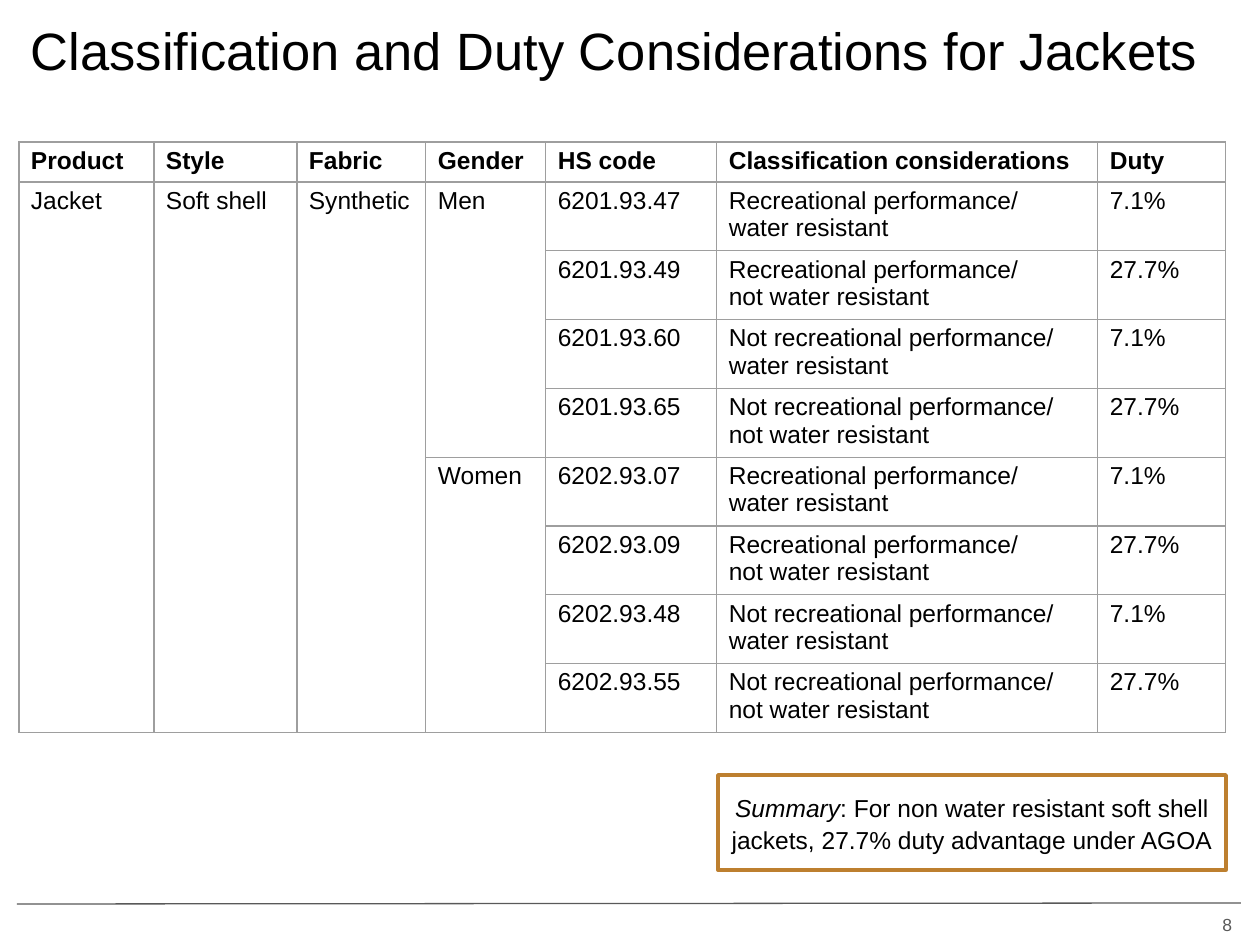
from itertools import product

from lxml import etree
from pptx import Presentation
from pptx import util as u
from pptx.dml.color import RGBColor
from pptx.enum import shapes, text
from pptx.oxml.ns import qn

# Content
TITLE = "Classification and Duty Considerations for Jackets"
HEADERS = ["Product", "Style", "Fabric", "Gender", "HS code",
           "Classification considerations", "Duty"]
SHARED = ["Jacket", "Soft shell", "Synthetic"]
CODES = {
    "Men": ["6201.93.47", "6201.93.49", "6201.93.60", "6201.93.65"],
    "Women": ["6202.93.07", "6202.93.09", "6202.93.48", "6202.93.55"],
}
PERFORMANCE = ["Recreational performance/", "Not recreational performance/"]
RESISTANCE = [("water resistant", "7.1%"), ("not water resistant", "27.7%")]
SUMMARY = [("Summary", True),
           (": For non water resistant soft shell jackets, "
            "27.7% duty advantage under AGOA", False)]
PAGE = "8"

# Layout in px
COLS = [135, 143, 129, 120, 171, 381, 128]
LEFT, TOP, HEAD_H, ROW_H = 19, 142, 40, 68
PAD_X, PAD_Y = 12, 5
BLACK, WHITE, GREY, BORDER, GOLD = "000000", "FFFFFF", "595959", "9E9E9E", "BD7F2F"


def px(n):
    return u.Emu(n * 914400 // 126)


def rgb(h):
    return RGBColor.from_string(h)


def add_run(p, words, size=14, color=BLACK, bold=False, italic=False):
    r = p.add_run()
    r.text = words
    f = r.font
    f.name, f.size, f.bold, f.italic = "Arial", u.Pt(size), bold, italic
    f.color.rgb = rgb(color)


def set_frame(tf, anchor=text.MSO_ANCHOR.TOP):
    tf.word_wrap = True
    tf.vertical_anchor = anchor
    tf.margin_left = tf.margin_right = tf.margin_top = tf.margin_bottom = px(PAD_X)
    return tf.paragraphs[0]


def set_borders(cell):
    tc_pr = cell._tc.get_or_add_tcPr()
    for i, side in enumerate(("lnL", "lnR", "lnT", "lnB")):
        ln = etree.Element(qn("a:" + side), w=str(u.Pt(0.75)))
        fill = etree.SubElement(ln, qn("a:solidFill"))
        etree.SubElement(fill, qn("a:srgbClr"), val=BORDER)
        tc_pr.insert(i, ln)


def fill_cell(cell, lines, bold=False):
    p = cell.text_frame.paragraphs[0]
    for i, line in enumerate(lines):
        if i:
            p.add_line_break()
        add_run(p, line, bold=bold)


prs = Presentation()
prs.slide_width, prs.slide_height = u.Inches(10), u.Inches(7.5)
s = prs.slides.add_slide(prs.slide_layouts[6])

# Footer rule
rule = s.shapes.add_connector(shapes.MSO_CONNECTOR.STRAIGHT,
                              px(17), px(904), px(1241), px(903))
rule.line.color.rgb = rgb(GREY)
rule.line.width = u.Pt(0.75)
etree.SubElement(rule._element.spPr, qn("a:effectLst"))

# Title
box = s.shapes.add_textbox(px(19), px(6), px(1198), px(117))
add_run(set_frame(box.text_frame), TITLE, size=30)

# Page number
box = s.shapes.add_textbox(px(1168), px(888), px(76), px(72))
p = set_frame(box.text_frame, text.MSO_ANCHOR.MIDDLE)
p.alignment = text.PP_ALIGN.RIGHT
add_run(p, PAGE, size=10, color=GREY)

# Table grid
n_rows = sum(len(codes) for codes in CODES.values())
frame = s.shapes.add_table(n_rows + 1, len(COLS), px(LEFT), px(TOP),
                           px(sum(COLS)), px(HEAD_H + n_rows * ROW_H))
table = frame.table
table.first_row = table.horz_banding = False
for col, width in zip(table.columns, COLS):
    col.width = px(width)
for i, row in enumerate(table.rows):
    row.height = px(ROW_H if i else HEAD_H)
    for cell in row.cells:
        cell.margin_left = cell.margin_right = px(PAD_X)
        cell.margin_top = cell.margin_bottom = px(PAD_Y)
        cell.fill.background()
        set_borders(cell)

# Table text: header, columns shared by all rows, then one block per gender
for c, header in enumerate(HEADERS):
    fill_cell(table.cell(0, c), [header], bold=True)
for c, value in enumerate(SHARED):
    table.cell(1, c).merge(table.cell(n_rows, c))
    fill_cell(table.cell(1, c), [value])
row = 1
for gender, codes in CODES.items():
    table.cell(row, 3).merge(table.cell(row + len(codes) - 1, 3))
    fill_cell(table.cell(row, 3), [gender])
    for code, (perf, (resist, duty)) in zip(codes, product(PERFORMANCE, RESISTANCE)):
        for c, lines in enumerate(([code], [perf, resist], [duty]), 4):
            fill_cell(table.cell(row, c), lines)
        row += 1

# Summary box
sp = s.shapes.add_shape(shapes.MSO_SHAPE.RECTANGLE, px(718), px(775), px(508), px(95))
sp.shadow.inherit = False
sp.fill.solid()
sp.fill.fore_color.rgb = rgb(WHITE)
sp.line.color.rgb = rgb(GOLD)
sp.line.width = u.Pt(2)
p = set_frame(sp.text_frame, text.MSO_ANCHOR.MIDDLE)
p.alignment = text.PP_ALIGN.CENTER
p.line_spacing = 1.07
for words, italic in SUMMARY:
    add_run(p, words, italic=italic)

prs.save("out.pptx")
